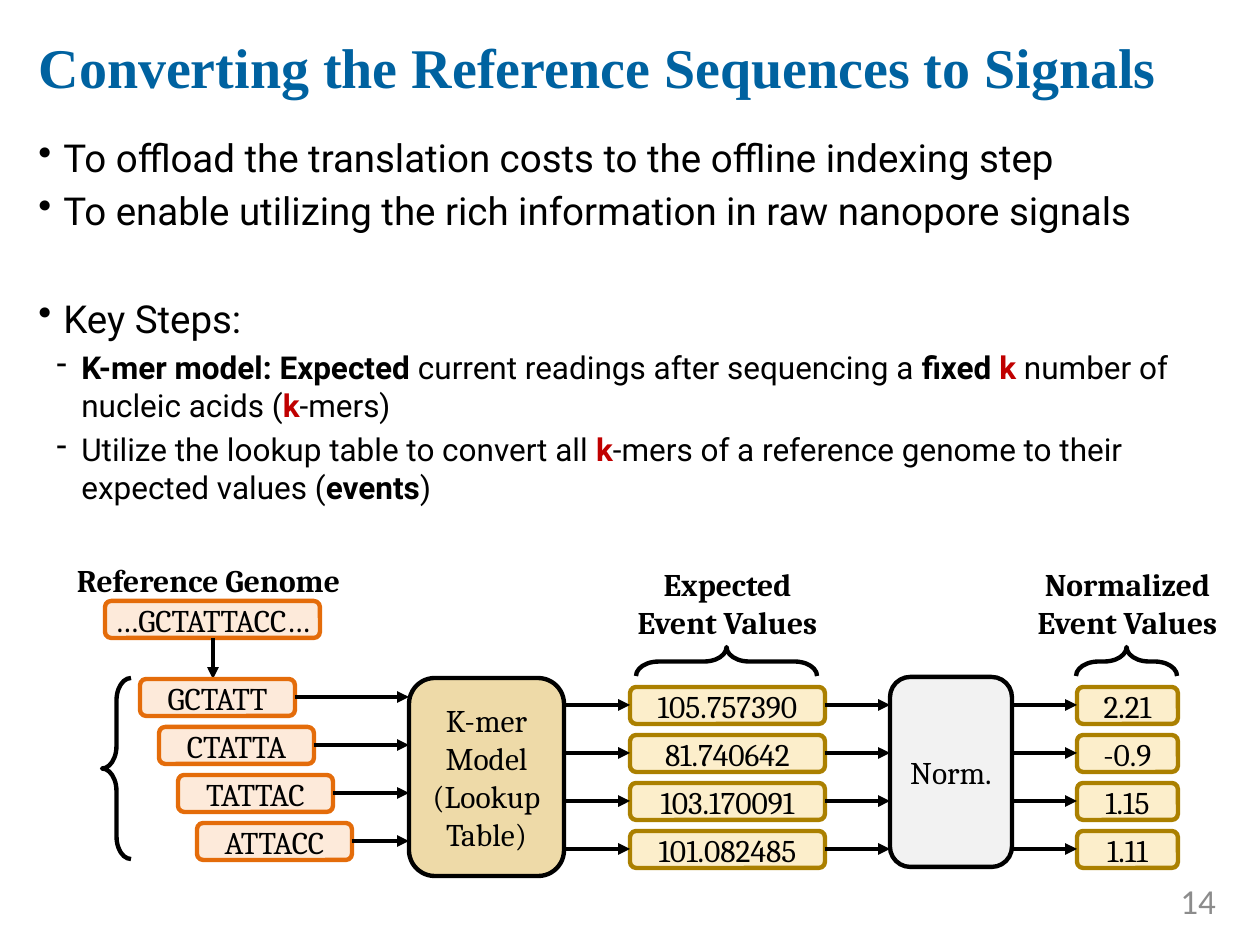
from lxml import etree
from pptx import Presentation
from pptx.dml.color import RGBColor
from pptx.enum.shapes import MSO_CONNECTOR, MSO_SHAPE
from pptx.enum.text import MSO_ANCHOR, MSO_AUTO_SIZE, PP_ALIGN
from pptx.oxml.ns import qn
from pptx.util import Pt

EMU_PER_PX = 914400 / 126
ROUND_RECT = MSO_SHAPE.ROUNDED_RECTANGLE
LEFT_BRACE = MSO_SHAPE.LEFT_BRACE
STRAIGHT = MSO_CONNECTOR.STRAIGHT
LEFT, CENTER, RIGHT = PP_ALIGN.LEFT, PP_ALIGN.CENTER, PP_ALIGN.RIGHT
TOP, MIDDLE = MSO_ANCHOR.TOP, MSO_ANCHOR.MIDDLE
NO_AUTOFIT = MSO_AUTO_SIZE.NONE

COLORS = {
    "title": "0062A0", "text": "000000", "key": "C00000", "number": "8C8C8C",
    "outline": "000000", "model": "EEDAA8", "norm": "F2F2F2",
    "sequence": "FDEADA", "sequence_line": "E46C0A",
    "value": "FCEECB", "value_line": "AB8000",
}
BOLD = {"bold": True}
KEY = {"bold": True, "color": "key"}

# Each bullet: level, space before in points, runs
BULLETS = [
    (0, 0, ["To offload the translation costs to the offline indexing step"]),
    (0, 4, ["To enable utilizing the rich information in raw nanopore signals"]),
    (0, 35, ["Key Steps:"]),
    (1, 4, [("K-mer model: Expected ", BOLD), "current readings after sequencing a ",
            ("fixed ", BOLD), ("k", KEY), " number of nucleic acids (",
            ("k", KEY), "-mers)"]),
    (1, 4, ["Utilize the lookup table to convert all ", ("k", KEY),
            "-mers of a reference genome to their expected values (",
            ("events", BOLD), ")"]),
]
# Marker, left margin, size for each bullet level
LEVELS = [("•", 25, 22), ("-", 43, 18)]
HANGING = 25

KMERS = ["GCTATT", "CTATTA", "TATTAC", "ATTACC"]
EXPECTED = ["105.757390", "81.740642", "103.170091", "101.082485"]
NORMALIZED = ["2.21", "-0.9", "1.15", "1.11"]
ROW_STEP, KMER_SHIFT, ROW_HEIGHT = 48, 19, 37
KMER_TOP, VALUE_TOP = 679, 687
KMER_LEFT, KMER_WIDTH = 140, 155
MODEL_LEFT, MODEL_WIDTH = 409, 155
EXPECTED_LEFT, EXPECTED_WIDTH = 630, 195
NORM_LEFT, NORM_WIDTH = 890, 122
NORMALIZED_LEFT, NORMALIZED_WIDTH = 1077, 101
LABEL_WIDTH = 195


def px(*lengths):
    return [round(length * EMU_PER_PX) for length in lengths]


def rgb(name):
    return RGBColor.from_string(COLORS[name])


def write_runs(paragraph, runs, font="Cambria", size=18, color="text", bold=False, align=LEFT):
    """Fill a paragraph; a run is text, or text with its own format."""
    paragraph.alignment = align
    for part in runs:
        wording, own = (part, {}) if isinstance(part, str) else part
        run = paragraph.add_run()
        run.text = wording
        run.font.name = font
        run.font.size = Pt(size)
        run.font.bold = own.get("bold", bold)
        run.font.color.rgb = rgb(own.get("color", color))


def write_text(frame, text, anchor=MIDDLE, margin=0, wrap=True, **text_format):
    """Write one paragraph per line of text."""
    frame.word_wrap = wrap
    frame.auto_size = NO_AUTOFIT
    frame.vertical_anchor = anchor
    if margin is not None:
        (inset,) = px(margin)
        frame.margin_left = frame.margin_right = inset
        frame.margin_top = frame.margin_bottom = inset
    for index, line in enumerate(text.split("\n")):
        paragraph = frame.add_paragraph() if index else frame.paragraphs[0]
        write_runs(paragraph, [line], **text_format)


def add_label(slide, text, left, top, width, height, **text_format):
    label = slide.shapes.add_textbox(*px(left, top, width, height))
    write_text(label.text_frame, text, **text_format)


def add_box(slide, text, left, top, width, height, fill, line, margin=0, wrap=False):
    box = slide.shapes.add_shape(ROUND_RECT, *px(left, top, width, height))
    box.shadow.inherit = False
    box.fill.solid()
    box.fill.fore_color.rgb = rgb(fill)
    box.line.color.rgb = rgb(line)
    box.line.width = Pt(2.5)
    write_text(box.text_frame, text, margin=margin, wrap=wrap, align=CENTER)


def add_arrow(slide, x1, y1, x2, y2):
    arrow = slide.shapes.add_connector(STRAIGHT, *px(x1, y1, x2, y2))
    arrow.line.color.rgb = rgb("outline")
    arrow.line.width = Pt(2.25)
    line = arrow.line._get_or_add_ln()
    etree.SubElement(line, qn("a:tailEnd"), type="triangle")
    etree.SubElement(arrow._element.spPr, qn("a:effectLst"))


def add_brace(slide, left, top, span, rotation=0):
    """Add a brace by its unrotated frame; it turns about its centre."""
    brace = slide.shapes.add_shape(LEFT_BRACE, *px(left, top, 29, span))
    brace.adjustments[0] = 0.776
    brace.rotation = rotation
    brace.shadow.inherit = False
    brace.fill.background()
    brace.line.color.rgb = rgb("outline")
    brace.line.width = Pt(2.5)


def add_title(slide, text):
    title = slide.shapes.title
    title.left, title.top, title.width, title.height = px(26, 13, 1212, 106)
    write_text(title.text_frame, text, margin=None, font="Times New Roman",
               size=32, color="title", bold=True)


def add_bullets(slide):
    frame = slide.shapes.add_textbox(*px(26, 125, 1234, 435)).text_frame
    frame.word_wrap = True
    frame.vertical_anchor = TOP
    (frame.margin_top,) = px(9)
    for index, (level, gap, runs) in enumerate(BULLETS):
        marker, margin, size = LEVELS[level]
        paragraph = frame.add_paragraph() if index else frame.paragraphs[0]
        properties = paragraph._p.get_or_add_pPr()
        indent, hanging = px(margin, HANGING)
        properties.set("marL", str(indent))
        properties.set("indent", str(-hanging))
        etree.SubElement(properties, qn("a:buChar"), char=marker)
        paragraph.level = level
        paragraph.space_before = Pt(gap)
        write_runs(paragraph, runs, font="Roboto", size=size)


def add_reference_genome(slide):
    add_label(slide, "Reference Genome", 77, 561, 273, 38, anchor=TOP, wrap=False, bold=True)
    add_box(slide, "…GCTATTACC…", 105, 601, 215, ROW_HEIGHT, "sequence", "sequence_line")
    add_arrow(slide, 213, 638, 213, KMER_TOP)
    add_brace(slide, 102, 678, 181)
    for row, kmer in enumerate(KMERS):
        left = KMER_LEFT + row * KMER_SHIFT
        top = KMER_TOP + row * ROW_STEP
        add_box(slide, kmer, left, top, KMER_WIDTH, ROW_HEIGHT, "sequence", "sequence_line")
        middle = top + ROW_HEIGHT // 2
        add_arrow(slide, left + KMER_WIDTH, middle, MODEL_LEFT, middle)


def add_value_column(slide, heading, values, left, width, arrow_start):
    """Add a headed column of values with an arrow into each."""
    center = left + width // 2
    add_label(slide, heading, center - LABEL_WIDTH // 2, 565, LABEL_WIDTH, 77,
              anchor=TOP, align=CENTER, bold=True)
    span = min(width, 181)
    add_brace(slide, center - 15, 661 - span // 2, span, rotation=90)
    for row, value in enumerate(values):
        top = VALUE_TOP + row * ROW_STEP
        add_box(slide, value, left, top, width, ROW_HEIGHT, "value", "value_line")
        middle = top + ROW_HEIGHT // 2
        add_arrow(slide, arrow_start, middle, left, middle)


def main():
    deck = Presentation()
    deck.slide_width, deck.slide_height = px(1260, 945)
    slide = deck.slides.add_slide(deck.slide_layouts[5])
    add_title(slide, "Converting the Reference Sequences to Signals")
    add_bullets(slide)
    add_box(slide, "K-mer Model\n(Lookup Table)", MODEL_LEFT, 678, MODEL_WIDTH, 198,
            "model", "outline", margin=10, wrap=True)
    add_reference_genome(slide)
    add_value_column(slide, "Expected Event Values", EXPECTED, EXPECTED_LEFT,
                     EXPECTED_WIDTH, MODEL_LEFT + MODEL_WIDTH)
    add_box(slide, "Norm.", NORM_LEFT, 677, NORM_WIDTH, 190, "norm", "outline")
    for row in range(len(EXPECTED)):
        middle = VALUE_TOP + row * ROW_STEP + ROW_HEIGHT // 2
        add_arrow(slide, EXPECTED_LEFT + EXPECTED_WIDTH, middle, NORM_LEFT, middle)
    add_value_column(slide, "Normalized Event Values", NORMALIZED, NORMALIZED_LEFT,
                     NORMALIZED_WIDTH, NORM_LEFT + NORM_WIDTH)
    add_label(slide, "14", 1092, 876, 136, 50, margin=12, font="Calibri", size=20,
              color="number", align=RIGHT)
    deck.save("out.pptx")


if __name__ == "__main__":
    main()
